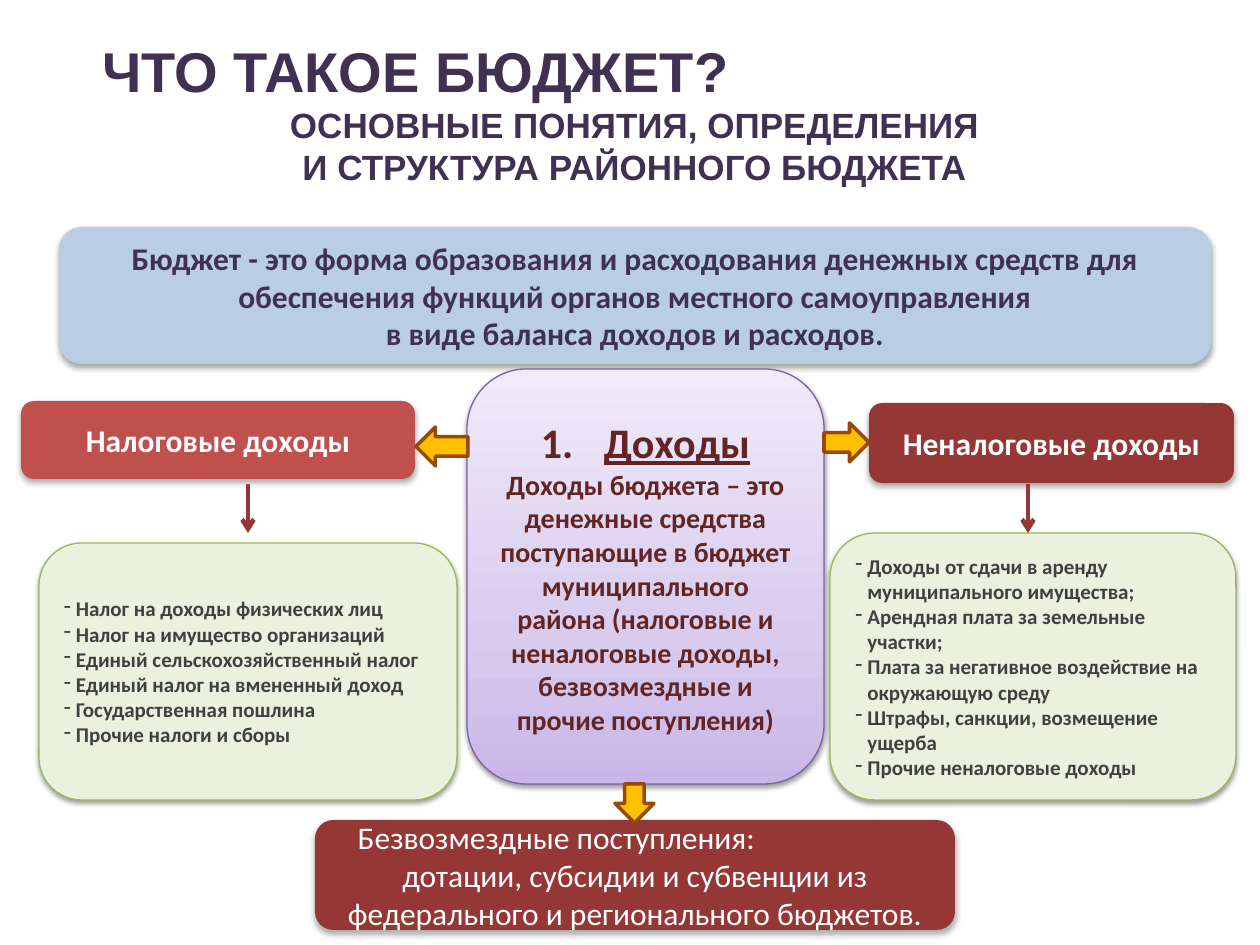
import dataclasses
from typing import Optional

import pptx
import pptx.dml.color
import pptx.enum.shapes
import pptx.enum.text
import pptx.oxml
import pptx.oxml.ns
import pptx.util
from lxml import etree

SCALE = 914400 / 126  # EMU in one px
SHAPE = pptx.enum.shapes.MSO_SHAPE
ALIGN = pptx.enum.text.PP_ALIGN
ANCHOR = pptx.enum.text.MSO_ANCHOR
qn = pptx.oxml.ns.qn


@dataclasses.dataclass(frozen=True)
class Theme:
    heading_font: str = "Arial"
    body_font: str = "Calibri"
    purple: str = "403152"
    blue: str = "B9CDE5"
    red: str = "C0504D"
    dark_red: str = "953735"
    maroon: str = "632523"
    pale_green: str = "EBF1DE"
    green: str = "98B955"
    violet: str = "7D60A0"
    grey: str = "404040"
    white: str = "FFFFFF"
    amber: str = "FFC000"
    brown: str = "984807"
    lilac: tuple = ((0, "C9B5E8"), (35, "D8CBEE"), (100, "F0EAF9"))
    title: int = 32
    subtitle: int = 20
    topic: int = 24
    label: int = 18
    body: int = 16
    item: int = 12


T = Theme()


@dataclasses.dataclass(frozen=True)
class Shadow:
    alpha: int
    blur: float
    dist: float


@dataclasses.dataclass(frozen=True)
class Para:
    text: str
    size: int
    color: str
    font: str = T.body_font
    bold: bool = True
    underline: bool = False
    align: ALIGN = ALIGN.CENTER
    margin: int = 0
    hang: int = 0
    bullet: Optional[str] = None  # "1." numbers, any other text is a bullet sign


@dataclasses.dataclass(frozen=True)
class Box:
    at: tuple
    paras: tuple
    shadow: Shadow
    fill: Optional[str] = None  # None takes the lilac gradient
    line: Optional[str] = None


@dataclasses.dataclass(frozen=True)
class Arrow:
    kind: SHAPE
    at: tuple


def px(n: float) -> int:
    return round(n * SCALE)


def rgb(value: str) -> pptx.dml.color.RGBColor:
    return pptx.dml.color.RGBColor.from_string(value)


def sub(parent, tag: str, **attrs):
    return etree.SubElement(parent, qn(tag), {k: str(v) for k, v in attrs.items()})


def write(tf, paras: tuple) -> None:
    tf.word_wrap = True
    for i, item in enumerate(paras):
        p = tf.paragraphs[0] if i == 0 else tf.add_paragraph()
        p.alignment = item.align
        pPr = p._p.get_or_add_pPr()
        if item.margin:
            pPr.set("marL", str(px(item.margin)))
            pPr.set("indent", str(-px(item.hang)))
        if item.bullet == "1.":
            sub(pPr, "a:buFont", typeface="+mj-lt")
            sub(pPr, "a:buAutoNum", type="arabicPeriod")
        elif item.bullet:
            sub(pPr, "a:buChar", char=item.bullet)
        for j, line in enumerate(item.text.split("\n")):
            if j:
                p.add_line_break()
            r = p.add_run()
            r.text = line
            r.font.name = item.font
            r.font.size = pptx.util.Pt(item.size)
            r.font.bold = item.bold
            r.font.underline = item.underline
            r.font.color.rgb = rgb(item.color)


def add_shadow(sp, shadow: Shadow) -> None:
    effects = sp._element.spPr.find(qn("a:effectLst"))
    outer = sub(effects, "a:outerShdw", blurRad=pptx.util.Pt(shadow.blur),
                dist=pptx.util.Pt(shadow.dist), dir=90 * 60000, rotWithShape=0)
    sub(sub(outer, "a:srgbClr", val="000000"), "a:alpha", val=shadow.alpha * 1000)


def add_gradient(sp, stops: tuple) -> None:
    sp.fill.gradient()
    sp.fill.gradient_angle = 90
    gs_list = sp._element.spPr.find(".//" + qn("a:gsLst"))
    for gs in list(gs_list):
        gs_list.remove(gs)
    for pos, color in stops:
        sub(sub(gs_list, "a:gs", pos=pos * 1000), "a:srgbClr", val=color)


def add_box(s, box: Box) -> None:
    sp = s.shapes.add_shape(SHAPE.ROUNDED_RECTANGLE, *map(px, box.at))
    sp.shadow.inherit = False
    if box.fill:
        sp.fill.solid()
        sp.fill.fore_color.rgb = rgb(box.fill)
    else:
        add_gradient(sp, T.lilac)
    if box.line:
        sp.line.color.rgb = rgb(box.line)
        sp.line.width = pptx.util.Pt(0.75)
    else:
        sp.line.fill.background()
    add_shadow(sp, box.shadow)
    sp.text_frame.vertical_anchor = ANCHOR.MIDDLE
    write(sp.text_frame, box.paras)


def add_block_arrow(s, arrow: Arrow) -> None:
    sp = s.shapes.add_shape(arrow.kind, *map(px, arrow.at))
    sp.shadow.inherit = False
    sp.fill.solid()
    sp.fill.fore_color.rgb = rgb(T.amber)
    sp.line.color.rgb = rgb(T.brown)
    sp.line.width = pptx.util.Pt(2)


def add_down_line(s, x: int, top: int, bottom: int) -> None:
    line = s.shapes.add_connector(pptx.enum.shapes.MSO_CONNECTOR.STRAIGHT,
                                  px(x), px(top), px(x), px(bottom))
    line.line.color.rgb = rgb(T.dark_red)
    line.line.width = pptx.util.Pt(2.5)
    sub(line.line._get_or_add_ln(), "a:tailEnd", type="arrow")
    sub(line._element.spPr, "a:effectLst")


def bullets(*texts: str) -> tuple:
    return tuple(Para(t, T.item, T.grey, align=ALIGN.LEFT, margin=12, hang=12, bullet="-")
                 for t in texts)


SOFT = Shadow(38, 3.1, 1.6)
DEEP = Shadow(32, 3.5, 2.2)

HEADING = (
    Para("ЧТО ТАКОЕ БЮДЖЕТ?", T.title, T.purple, T.heading_font, align=ALIGN.LEFT, margin=7),
    Para("ОСНОВНЫЕ ПОНЯТИЯ, ОПРЕДЕЛЕНИЯ", T.subtitle, T.purple, T.heading_font),
    Para("И СТРУКТУРА РАЙОННОГО БЮДЖЕТА", T.subtitle, T.purple, T.heading_font),
)

BOXES = (
    # Definition of the budget
    Box((59, 227, 1152, 137), (
        Para("Бюджет - это форма образования и расходования денежных средств для "
             "обеспечения функций органов местного самоуправления", T.label, T.purple),
        Para("в виде баланса доходов и расходов.", T.label, T.purple),
    ), Shadow(35, 3.1, 1.8), T.blue),
    # Income in general
    Box((467, 369, 357, 415), (
        Para("Доходы", T.topic, T.maroon, underline=True, margin=63, hang=63, bullet="1."),
        Para("Доходы бюджета – это денежные средства поступающие в бюджет "
             "муниципального района (налоговые и неналоговые доходы,", T.body, T.maroon),
        Para("безвозмездные и прочие поступления)", T.body, T.maroon),
    ), SOFT, line=T.violet),
    # Tax income
    Box((21, 401, 394, 78), (Para("Налоговые доходы", T.label, T.white),), DEEP, T.red),
    Box((39, 543, 418, 257), bullets(
        "Налог на доходы физических лиц",
        "Налог на имущество организаций",
        "Единый сельскохозяйственный налог",
        "Единый налог на вмененный доход",
        "Государственная пошлина",
        "Прочие налоги и сборы",
    ), SOFT, T.pale_green, T.green),
    # Non-tax income
    Box((869, 403, 365, 80), (Para("Неналоговые доходы", T.label, T.white),), DEEP, T.dark_red),
    Box((830, 533, 406, 267), bullets(
        "Доходы от сдачи в аренду\nмуниципального имущества;",
        "Арендная плата за земельные\nучастки;",
        "Плата за негативное воздействие на\nокружающую среду",
        "Штрафы, санкции, возмещение\nущерба",
        "Прочие неналоговые доходы",
    ), SOFT, T.pale_green, T.green),
    # Grants
    Box((315, 820, 640, 110), (
        Para("Безвозмездные поступления:", T.label, T.white, bold=False,
             align=ALIGN.LEFT, margin=25),
        Para("дотации, субсидии и субвенции из федерального и регионального бюджетов.",
             T.label, T.white, bold=False),
    ), DEEP, T.dark_red),
)

ARROWS = (
    Arrow(SHAPE.DOWN_ARROW, (615, 784, 39, 39)),
    Arrow(SHAPE.RIGHT_ARROW, (824, 423, 45, 39)),
    Arrow(SHAPE.LEFT_ARROW, (416, 427, 52, 39)),
)


def main() -> None:
    prs = pptx.Presentation()
    prs.slide_width, prs.slide_height = px(1260), px(945)
    s = prs.slides.add_slide(prs.slide_layouts[6])
    write(s.shapes.add_textbox(*map(px, (83, 30, 1103, 165))).text_frame, HEADING)
    for box in BOXES:
        add_box(s, box)
    for arrow in ARROWS:
        add_block_arrow(s, arrow)
    for x in (1028, 248):
        add_down_line(s, x, 484, 533)
    prs.save("out.pptx")


if __name__ == "__main__":
    main()
